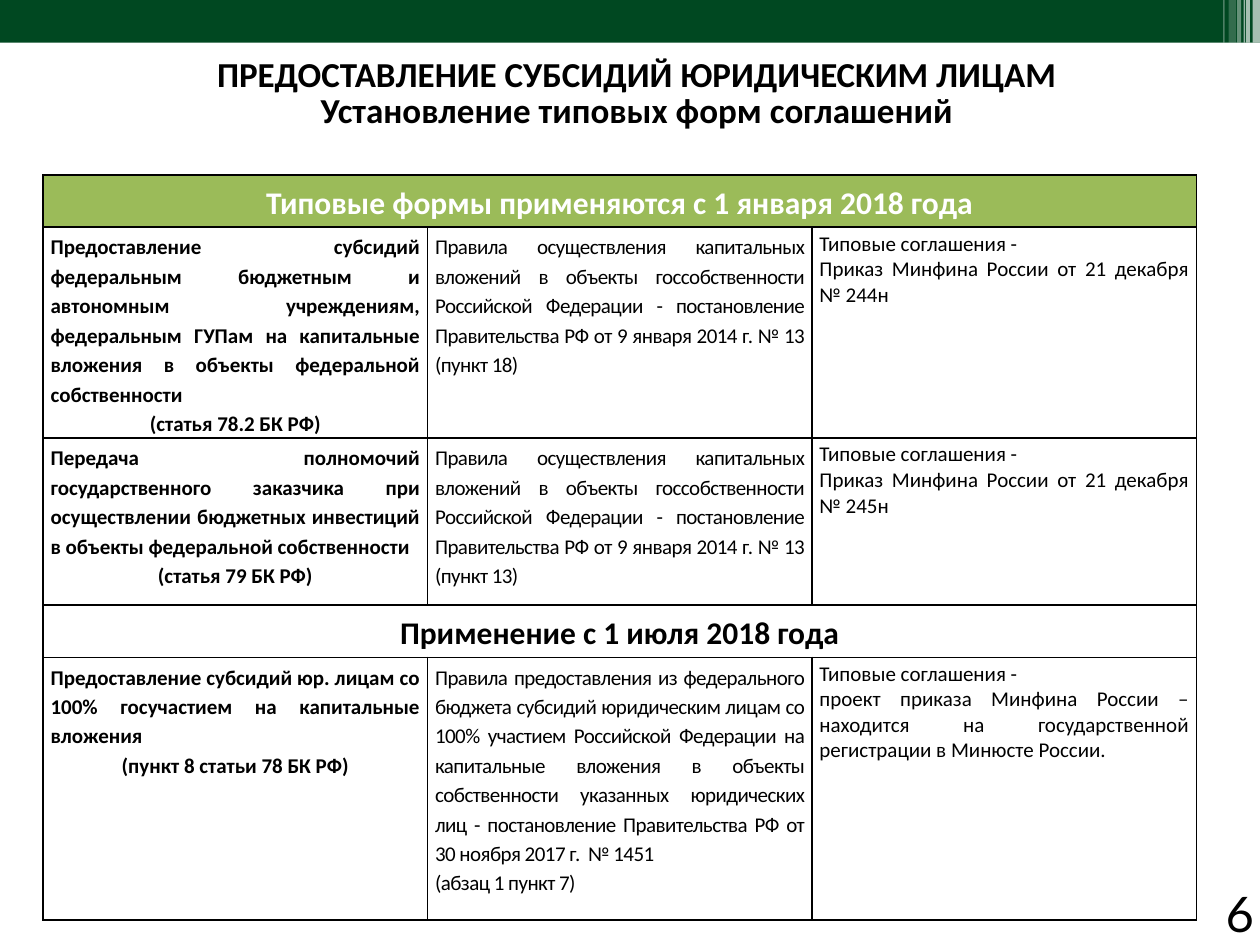
"""Build the slide on standard agreement forms for subsidies to legal entities."""
from lxml.etree import SubElement
from pptx import Presentation
from pptx.dml.color import RGBColor
from pptx.enum.shapes import MSO_SHAPE
from pptx.enum.text import PP_ALIGN as Align
from pptx.oxml import parse_xml
from pptx.oxml.ns import nsdecls, qn
from pptx.util import Cm, Pt

GREEN = RGBColor(0x00, 0x48, 0x21)
LIME = RGBColor(0x9B, 0xBB, 0x59)
WHITE = RGBColor(0xFF, 0xFF, 0xFF)
BLACK = RGBColor(0x00, 0x00, 0x00)

BAND_HEIGHT = 0.86
STRIPES = [
    (25.25, 0.15, 65),
    (25.12, 0.08, 65),
    (25.07, 0.03, 60),
    (24.94, 0.08, 40),
    (24.77, 0.15, 20),
    (24.66, 0.03, 30),
]

TITLE = [
    "ПРЕДОСТАВЛЕНИЕ СУБСИДИЙ ЮРИДИЧЕСКИМ ЛИЦАМ",
    "Установление типовых форм соглашений",
]
PAGE_NUMBER = "6"

SECTIONS = [
    ("Типовые формы применяются с 1 января 2018 года", LIME, WHITE, [
        (
            ["Предоставление субсидий федеральным бюджетным и автономным учреждениям, "
             "федеральным ГУПам на капитальные вложения в объекты федеральной собственности",
             "(статья 78.2 БК РФ)"],
            ["Правила осуществления капитальных вложений в объекты госсобственности "
             "Российской Федерации - постановление Правительства РФ "
             "от 9 января 2014 г. № 13 (пункт 18)"],
            ["Типовые соглашения -",
             "Приказ Минфина России от 21 декабря № 244н"],
        ),
        (
            ["Передача полномочий государственного заказчика при осуществлении "
             "бюджетных инвестиций в объекты федеральной собственности",
             "(статья 79 БК РФ)"],
            ["Правила осуществления капитальных вложений в объекты госсобственности "
             "Российской Федерации - постановление Правительства РФ "
             "от 9 января 2014 г. № 13 (пункт 13)"],
            ["Типовые соглашения -",
             "Приказ Минфина России от 21 декабря № 245н"],
        ),
    ]),
    ("Применение с 1 июля 2018 года", WHITE, BLACK, [
        (
            ["Предоставление субсидий юр. лицам со 100% госучастием "
             "на капитальные вложения",
             "(пункт 8 статьи 78 БК РФ)"],
            ["Правила предоставления из федерального бюджета субсидий юридическим лицам "
             "со 100% участием Российской Федерации на капитальные вложения в объекты "
             "собственности указанных юридических лиц - постановление Правительства РФ "
             "от 30 ноября 2017 г.  № 1451",
             "(абзац 1 пункт 7)"],
            ["Типовые соглашения -",
             "проект приказа Минфина России – находится на государственной "
             "регистрации в Минюсте России."],
        ),
    ]),
]
ROW_HEIGHTS = [1.05, 4.25, 3.37, 1.05, 5.3]
COLUMN_WIDTH = 7.75
COLUMN_FORMATS = [
    {"bold": True, "spacing": 1.15, "tracking": 0},
    {"bold": False, "spacing": 1.15, "tracking": -30},
    {"bold": False, "spacing": 1.0, "tracking": 0},
]
CELL_MARGINS = {
    "margin_left": Cm(0.15), "margin_right": Cm(0.15),
    "margin_top": Cm(0.08), "margin_bottom": Cm(0.08),
}


def write(frame, lines, size, color, align, bold=False, spacing=1.0, tracking=0, name="Calibri"):
    frame.word_wrap = True
    for index, line in enumerate(lines):
        paragraph = frame.paragraphs[0] if index == 0 else frame.add_paragraph()
        paragraph.alignment = Align.CENTER if line.startswith(("(статья", "(пункт")) else align
        paragraph.line_spacing = spacing
        run = paragraph.add_run()
        run.text = line
        for key, value in {"name": name, "size": Pt(size), "bold": bold}.items():
            setattr(run.font, key, value)
        run.font.color.rgb = color
        if tracking:
            run._r.get_or_add_rPr().set("spc", str(tracking))


def add_bar(slide, left, width, color, opacity=100):
    shape = slide.shapes.add_shape(
        MSO_SHAPE.RECTANGLE, Cm(left), 0, Cm(width), Cm(BAND_HEIGHT))
    shape.shadow.inherit = False
    shape.fill.solid()
    shape.fill.fore_color.rgb = color
    shape.line.fill.background()
    if opacity < 100:
        fill_color = shape._element.spPr.find(qn("a:solidFill"))[0]
        SubElement(fill_color, qn("a:alpha"), val=str(opacity * 1000))


def style_cell(cell, color):
    for key, value in CELL_MARGINS.items():
        setattr(cell, key, value)
    cell.fill.solid()
    cell.fill.fore_color.rgb = color
    properties = cell._tc.get_or_add_tcPr()
    for index, side in enumerate("LRTB"):
        properties.insert(index, parse_xml(
            f'<a:ln{side} {nsdecls("a")} w="12700"><a:solidFill>'
            f'<a:srgbClr val="{BLACK}"/></a:solidFill></a:ln{side}>'))


def add_forms_table(slide):
    columns = len(COLUMN_FORMATS)
    table = slide.shapes.add_table(
        len(ROW_HEIGHTS), columns, Cm(0.87), Cm(3.53),
        Cm(COLUMN_WIDTH * columns), Cm(sum(ROW_HEIGHTS))).table
    table.first_row = table.horz_banding = False
    for column in table.columns:
        column.width = Cm(COLUMN_WIDTH)
    for row, height in zip(table.rows, ROW_HEIGHTS):
        row.height = Cm(height)
    row_index = 0
    for heading, fill, color, records in SECTIONS:
        for column in range(columns):
            style_cell(table.cell(row_index, column), fill)
        header = table.cell(row_index, 0)
        header.merge(table.cell(row_index, columns - 1))
        write(header.text_frame, [heading], 18, color, Align.CENTER, True, 1.15)
        for record in records:
            row_index += 1
            for column, (lines, text_format) in enumerate(zip(record, COLUMN_FORMATS)):
                cell = table.cell(row_index, column)
                style_cell(cell, WHITE)
                write(cell.text_frame, lines, 12, BLACK, Align.JUSTIFY, **text_format)
        row_index += 1


def main():
    presentation = Presentation()
    presentation.slide_width, presentation.slide_height = Cm(25.4), Cm(19.05)
    slide = presentation.slides.add_slide(presentation.slide_layouts[6])
    add_bar(slide, 0, 25.4, GREEN)
    for left, width, opacity in STRIPES:
        add_bar(slide, left, width, WHITE, opacity)
    title = slide.shapes.add_textbox(Cm(2.11), Cm(1.07), Cm(21.46), Cm(1.7))
    write(title.text_frame, TITLE, 20, BLACK, Align.CENTER, True, 0.85)
    add_forms_table(slide)
    number = slide.shapes.add_textbox(Cm(23.5), Cm(17.68), Cm(2.03), Cm(1.24))
    write(number.text_frame, [PAGE_NUMBER], 28, BLACK, Align.RIGHT, name="Lato")
    presentation.save("out.pptx")


if __name__ == "__main__":
    main()
